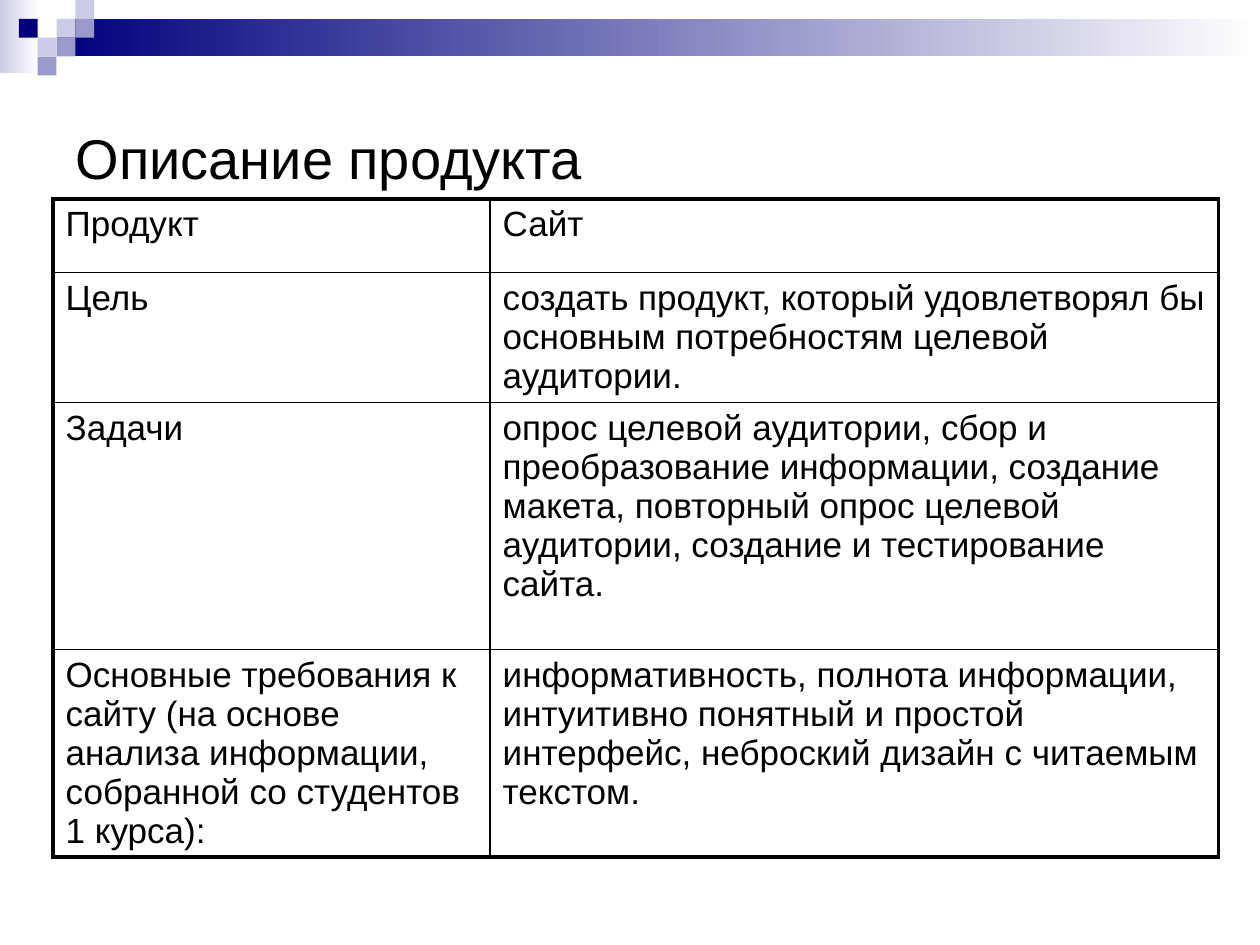
from dataclasses import dataclass

from lxml.etree import SubElement
from pptx import Presentation
from pptx.dml.color import RGBColor
from pptx.enum.shapes import MSO_SHAPE
from pptx.enum.text import MSO_ANCHOR, PP_ALIGN
from pptx.oxml.ns import qn
from pptx.util import Cm, Pt


@dataclass(frozen=True)
class Theme:
    """Colours, font and sizes of the slide."""
    font: str = "Arial"
    ink: str = "000000"
    navy: str = "00007D"
    mid: str = "9999CC"
    pale: str = "CCCCE6"
    white: str = "FFFFFF"
    title_size: int = 32
    cell_size: int = 20
    outer: float = 2.25
    inner: float = 1


def write(tf, text, *, size, color, font, anchor=MSO_ANCHOR.TOP):
    """Put formatted, left-aligned text in a text frame."""
    tf.word_wrap = True
    tf.vertical_anchor = anchor
    p = tf.paragraphs[0]
    p.alignment = PP_ALIGN.LEFT
    r = p.add_run()
    r.text = text
    r.font.size = Pt(size)
    r.font.name = font
    r.font.color.rgb = RGBColor.from_string(color)


class Deck:
    """Holds the theme and the current slide."""

    def __init__(self, prs, theme):
        """Add a title-only slide."""
        self.theme = theme
        self.s = prs.slides.add_slide(prs.slide_layouts[5])

    def rect(self, x, y, w, h, *colors):
        """Draw a borderless rectangle, with a gradient if two colours are given."""
        sp = self.s.shapes.add_shape(MSO_SHAPE.RECTANGLE, Cm(x), Cm(y), Cm(w), Cm(h))
        sp.shadow.inherit = False
        sp.line.fill.background()
        if len(colors) == 1:
            sp.fill.solid()
            sp.fill.fore_color.rgb = RGBColor.from_string(colors[0])
            return
        sp.fill.gradient()
        sp.fill.gradient_angle = 0
        for stop, color in zip(sp.fill.gradient_stops, colors):
            stop.color.rgb = RGBColor.from_string(color)

    def title(self, text, x, y, w, h):
        """Place the title placeholder in front of the decoration."""
        sp = self.s.shapes.title
        sp.left, sp.top, sp.width, sp.height = Cm(x), Cm(y), Cm(w), Cm(h)
        self.s.shapes._spTree.append(sp._element)
        t = self.theme
        write(sp.text_frame, text, size=t.title_size, color=t.ink, font=t.font,
              anchor=MSO_ANCHOR.MIDDLE)

    def borders(self, cell, widths):
        """Draw the left, right, top and bottom borders of a cell."""
        tc_pr = cell._tc.get_or_add_tcPr()
        for i, (side, width) in enumerate(zip("LRTB", widths)):
            ln = SubElement(tc_pr, qn(f"a:ln{side}"), w=str(Pt(width)))
            fill = SubElement(ln, qn("a:solidFill"))
            SubElement(fill, qn("a:srgbClr"), val=self.theme.ink)
            tc_pr.insert(i, ln)

    def table(self, rows, x, y, widths, heights):
        """Add a plain table with a heavy frame and thin inner lines."""
        t = self.theme
        n, m = len(heights), len(widths)
        table = self.s.shapes.add_table(
            n, m, Cm(x), Cm(y), Cm(sum(widths)), Cm(sum(heights))).table
        table.first_row = table.horz_banding = False
        for col, w in zip(table.columns, widths):
            col.width = Cm(w)
        for row, h in zip(table.rows, heights):
            row.height = Cm(h)
        for i, texts in enumerate(rows):
            for j, text in enumerate(texts):
                cell = table.cell(i, j)
                cell.fill.background()
                write(cell.text_frame, text, size=t.cell_size, color=t.ink, font=t.font)
                edges = (j == 0, j == m - 1, i == 0, i == n - 1)
                self.borders(cell, [t.outer if e else t.inner for e in edges])


def main():
    """Build and save the slide."""
    prs = Presentation()
    prs.slide_width, prs.slide_height = Cm(25.4), Cm(19.05)
    t = Theme()
    deck = Deck(prs, t)

    unit = 0.38
    deck.rect(0, 0, 0.79, 1.47, t.pale, t.white)
    deck.rect(3 * unit, unit, 25.4 - 3 * unit, 2 * unit, t.navy, t.white)
    squares = [(3, 1, t.pale), (4, 0, t.pale), (4, 1, t.mid), (2, 2, t.pale),
               (1, 1, t.navy), (3, 2, t.mid), (2, 3, t.mid)]
    for col, row, color in squares:
        deck.rect(col * unit, row * unit, unit, unit, color)

    deck.title("Описание продукта", 1.27, 1.27, 22.86, 3.81)
    rows = [
        ("Продукт", "Сайт"),
        ("Цель", "создать продукт, который удовлетворял бы основным потребностям "
                 "целевой аудитории."),
        ("Задачи", "опрос целевой аудитории, сбор и преобразование информации, "
                   "создание макета, повторный опрос целевой аудитории, создание "
                   "и тестирование сайта."),
        ("Основные требования к сайту (на основе анализа информации, собранной "
         "со студентов 1 курса):",
         "информативность, полнота информации, интуитивно понятный и простой "
         "интерфейс, неброский дизайн с читаемым текстом."),
    ]
    deck.table(rows, 1.07, 4.01, widths=[8.81, 14.68], heights=[1.48, 2.62, 4.98, 4.19])
    prs.save("out.pptx")


if __name__ == "__main__":
    main()
